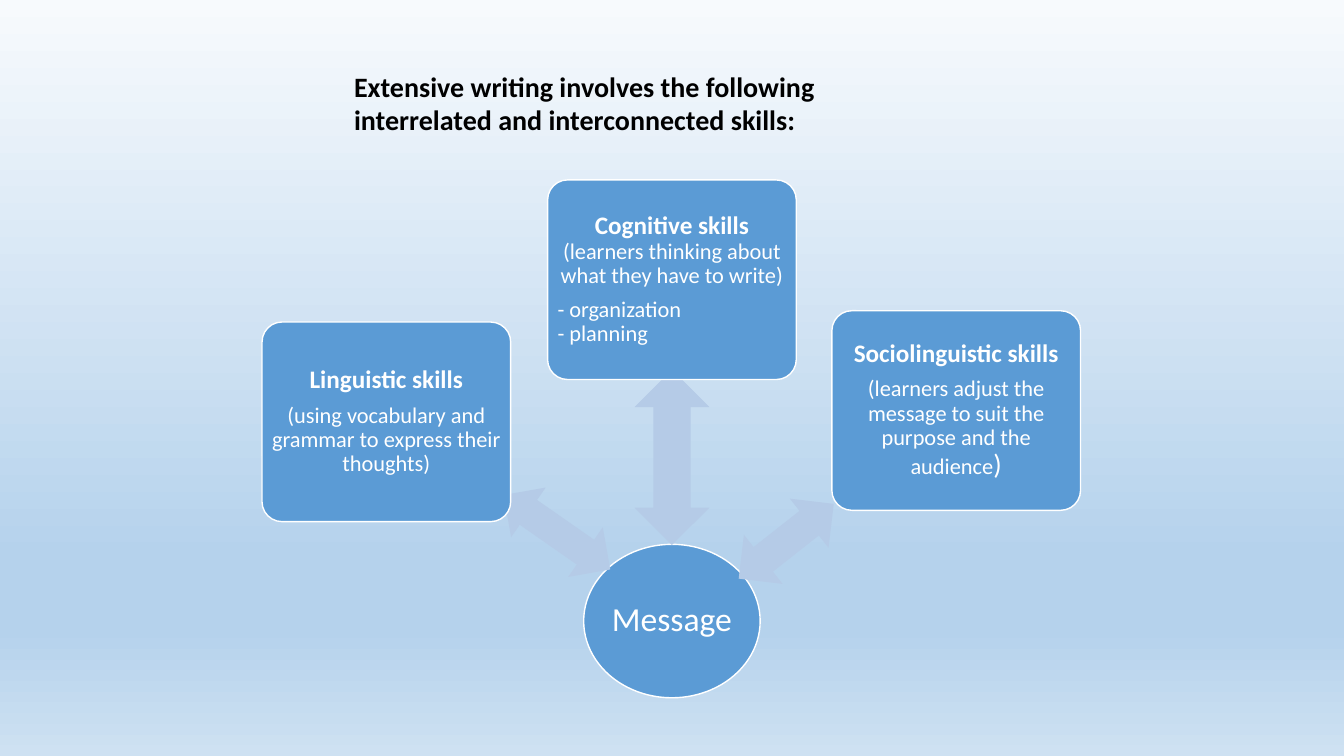
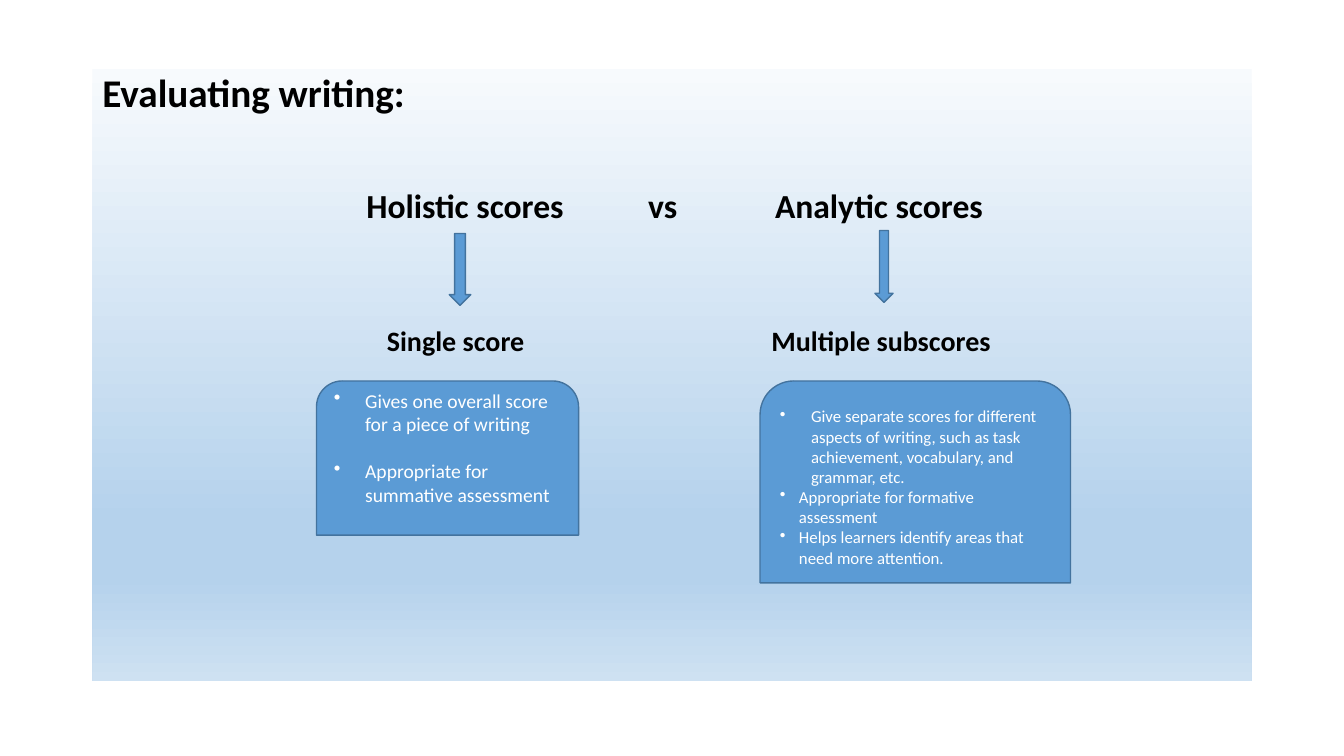
from dataclasses import dataclass

from lxml import etree
from pptx import Presentation
from pptx import util as u
from pptx.dml.color import RGBColor
from pptx.enum import shapes, text
from pptx.oxml.ns import qn

KIND = shapes.MSO_SHAPE
LEFT, MID = text.PP_ALIGN.LEFT, text.PP_ALIGN.CENTER
TOP, CORE = text.MSO_ANCHOR.TOP, text.MSO_ANCHOR.MIDDLE


@dataclass(frozen=True)
class Theme:
    font: str = "Calibri"
    wide: float = 13.33
    high: float = 7.5
    # Colours
    ink: str = "000000"
    white: str = "FFFFFF"
    blue: str = "5B9BD5"
    edge: str = "43739E"
    pale: str = "B5CBE7"
    fade: tuple = ((0, "F7FAFD"), (74, "B5D2EC"), (83, "B5D2EC"), (100, "CEE1F2"))
    # Type sizes
    title: int = 28
    large: int = 24
    head: int = 20
    name: int = 18
    body: int = 16
    note: int = 14
    small: int = 12


@dataclass
class Para:
    runs: list  # (text, size, bold) for each run
    align: int = LEFT
    lines: float = 1.0
    before: float = 0
    after: float = 0
    indent: float = 0  # hanging bullet indent in inches


class Deck:
    """Holds the theme and current slide; lengths are percent of the slide."""

    def __init__(self, theme):
        self.theme = theme
        self.prs = Presentation()
        self.prs.slide_width = u.Inches(theme.wide)
        self.prs.slide_height = u.Inches(theme.high)
        self.slide = None

    def start(self):
        self.slide = self.prs.slides.add_slide(self.prs.slide_layouts[6])

    def place(self, left, top, width, height):
        wide, high = self.prs.slide_width, self.prs.slide_height
        return [u.Emu(round(share * full / 100)) for share, full in
                ((left, wide), (top, high), (width, wide), (height, high))]

    def fade(self, fill, root):
        """Apply the shared vertical gradient to a fill inside root."""
        fill.gradient()
        fill.gradient_angle = 270
        stops = next(root.iter(qn("a:gsLst")))
        for stop in list(stops):
            stops.remove(stop)
        for pos, tone in self.theme.fade:
            stop = etree.SubElement(stops, qn("a:gs"), pos=str(pos * 1000))
            etree.SubElement(stop, qn("a:srgbClr"), val=tone)

    def backdrop(self):
        self.fade(self.slide.background.fill, self.slide.element)

    def copy(self, frame, paras, color, anchor=CORE, inset=(0.1, 0.05)):
        """Set paragraphs in a text frame."""
        frame.word_wrap = True
        frame.vertical_anchor = anchor
        frame.margin_left = frame.margin_right = u.Inches(inset[0])
        frame.margin_top = frame.margin_bottom = u.Inches(inset[1])
        for num, para in enumerate(paras):
            p = frame.add_paragraph() if num else frame.paragraphs[0]
            p.text = para.runs[0][0]
            for part in para.runs[1:]:
                p.add_run().text = part[0]
            p.alignment, p.line_spacing = para.align, para.lines
            p.space_before, p.space_after = u.Pt(para.before), u.Pt(para.after)
            for run, (_, size, bold) in zip(p.runs, para.runs):
                run.font.name, run.font.bold = self.theme.font, bold
                run.font.size = u.Pt(size)
                run.font.color.rgb = RGBColor.from_string(color)
            if para.indent:
                self.bullet(p, u.Inches(para.indent))

    def bullet(self, p, gap):
        props = p._p.get_or_add_pPr()
        props.set("marL", str(gap))
        props.set("indent", str(-gap))
        etree.SubElement(props, qn("a:buChar"), char="•")

    def shape(self, kind, at, fill=None, line=None, adjust=None, turn=0):
        item = self.slide.shapes.add_shape(kind, *self.place(*at))
        item.shadow.inherit = False
        item.rotation = turn
        if adjust is not None:
            item.adjustments[0] = adjust
        if fill:
            item.fill.solid()
            item.fill.fore_color.rgb = RGBColor.from_string(fill)
        else:
            self.fade(item.fill, item.element)
        if line:
            item.line.color.rgb = RGBColor.from_string(line)
            item.line.width = u.Pt(1)
        else:
            item.line.fill.background()
        return item

    def label(self, at, words, size, align=LEFT, anchor=TOP):
        box = self.slide.shapes.add_textbox(*self.place(*at))
        self.copy(box.text_frame, [Para([(words, size, True)], align)],
                  self.theme.ink, anchor)

    def tag(self, x, y, words, size):
        """A label centred on a point."""
        wide, high = 22, 8
        self.label((x - wide / 2, y - high / 2, wide, high), words, size, MID, CORE)

    def arrow(self, x, y, wide, high, turn):
        """A double arrow centred on a point."""
        self.shape(KIND.LEFT_RIGHT_ARROW, (x - wide / 2, y - high / 2, wide, high),
                   self.theme.pale, turn=turn)

    def skill(self, left, top, paras):
        t = self.theme
        box = self.shape(KIND.ROUNDED_RECTANGLE, (left, top, 18.5, 26.4),
                         t.blue, t.white, 0.1)
        self.copy(box.text_frame, paras, t.white, inset=(0.04, 0.04))

    def card(self, at, paras, **style):
        t = self.theme
        box = self.shape(KIND.ROUND_2_SAME_RECTANGLE, at, t.blue, t.edge)
        self.copy(box.text_frame, paras, t.white, **style)


def skills(deck):
    t = deck.theme
    deck.start()
    deck.backdrop()

    def mid(*runs):
        return Para(list(runs), MID, 0.9, after=7)

    # Message circle
    hub = deck.shape(KIND.OVAL, (43.43, 72, 13.13, 20.3), t.blue, t.white)
    deck.copy(hub.text_frame, [mid(("Message", t.large, False))], t.white,
              inset=(0.02, 0.02))

    # Skills, each box over its arrow
    boxes = [
        ((41.44, 70.4, 9.68, 8, 214.9), (19.5, 42.6), [
            mid(("Linguistic skills", t.name, True)),
            mid(("(using vocabulary and grammar to express their thoughts)",
                 t.body, False))]),
        ((50, 60.5, 13.05, 9.87, 270), (40.75, 23.8), [
            mid(("Cognitive skills ", t.name, True),
                ("(learners thinking about what they have to write)",
                 t.body, False)),
            Para([("- organization", t.body, False)], lines=0.9),
            Para([("- planning", t.body, False)], lines=0.9)]),
        ((58.5, 71.6, 9, 8.27, 321.8), (61.9, 41.1), [
            mid(("Sociolinguistic skills", t.name, True)),
            mid(("(learners adjust the message to suit the purpose and "
                 "the audience", t.body, False), (")", t.head, False))]),
    ]
    for arrow, spot, paras in boxes:
        deck.arrow(*arrow)
        deck.skill(*spot, paras)

    # Heading
    deck.label((25.6, 8.5, 44.2, 10.3), "Extensive writing involves the following "
               "interrelated and interconnected skills:", t.head)


def scores(deck):
    t = deck.theme
    deck.start()

    # Panel with title
    panel = deck.shape(KIND.RECTANGLE, (6.88, 9.1, 86.25, 80.95))
    deck.copy(panel.text_frame, [Para([("Evaluating writing:", t.title, True)],
                                      lines=0.9)], t.ink, TOP)

    # Compared scores
    for x, words in ((34.6, "Holistic scores"), (49.3, "vs"),
                     (65.4, "Analytic scores")):
        deck.tag(x, 27.1, words, t.large)
    for x, words in ((33.9, "Single score"), (65.55, "Multiple subscores")):
        deck.tag(x, 45, words, t.head)
    for at in ((33.43, 30.9, 1.6, 9.5), (65.1, 30.5, 1.35, 9.5)):
        deck.shape(KIND.DOWN_ARROW, at, t.blue, t.edge)

    # Cards with details
    deck.card((56.55, 50.4, 23.1, 26.7), [
        Para([(words, t.small, False)], indent=gap) for words, gap in (
            ("Give separate scores for different aspects of writing, such as "
             "task achievement, vocabulary, and grammar, etc.", 0.31),
            ("Appropriate for formative assessment", 0.19),
            ("Helps learners identify areas that need more attention.", 0.19))])
    deck.card((23.55, 50.4, 19.5, 20.4), [
        Para([(words, t.note, False)], before=gap, indent=0.31) for words, gap in (
            ("Gives one overall score for a piece of writing", 0),
            ("Appropriate for summative assessment", 17))],
        anchor=TOP, inset=(0.1, 0))


def main():
    deck = Deck(Theme())
    skills(deck)
    scores(deck)
    deck.prs.save("out.pptx")


if __name__ == "__main__":
    main()
